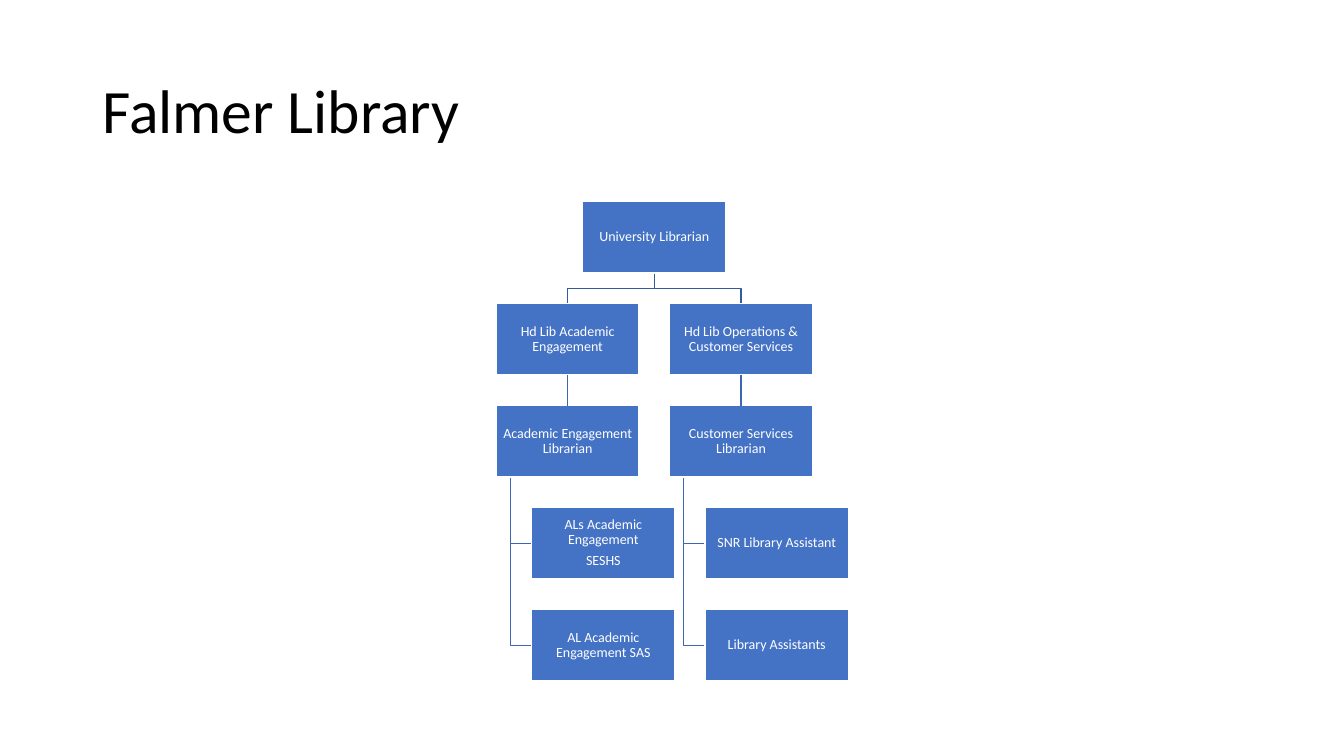
from pptx import Presentation
from pptx.dml.color import RGBColor
from pptx.enum.shapes import MSO_CONNECTOR, MSO_SHAPE
from pptx.enum.text import MSO_ANCHOR, PP_ALIGN
from pptx.oxml.ns import qn
from pptx.util import Cm, Pt
from lxml.etree import SubElement

# Chart geometry in centimetres
BOX_WIDTH, BOX_HEIGHT = 3.61, 1.8
TOP, ROW_STEP = 5.08, 2.57
LEFT, COLUMN_STEP = 12.5, 4.37
INDENT = 0.9
DROP = 0.36  # from a parent's left edge to the line down to its staff

BRANCHES = [
    ["Hd Lib Academic Engagement", "Academic Engagement Librarian",
     "ALs Academic Engagement\nSESHS", "AL Academic Engagement SAS"],
    ["Hd Lib Operations & Customer Services", "Customer Services Librarian",
     "SNR Library Assistant", "Library Assistants"],
]


def color(value):
    return RGBColor.from_string(value)


def row_top(row):
    return TOP + row * ROW_STEP


class ChartPage:
    font = "Calibri"
    fill = "4472C4"
    white = "FFFFFF"
    branch_line = "3E67B2"
    top_line = "365B9D"

    def __init__(self, deck):
        self.page = deck.slides.add_slide(deck.slide_layouts[5])

    def set_text(self, frame, text, size, text_color, align, space_after=0):
        frame.text = text
        frame.word_wrap = True
        frame.vertical_anchor = MSO_ANCHOR.MIDDLE
        for para in frame.paragraphs:
            para.alignment = align
            para.line_spacing = 0.9
            para.space_after = Pt(space_after)
            para.font.name = self.font
            para.font.size = Pt(size)
            para.font.color.rgb = color(text_color)

    def title(self, text):
        box = self.page.shapes.title
        box.left, box.top, box.width, box.height = Cm(2.33), Cm(1.01), Cm(29.21), Cm(3.68)
        self.set_text(box.text_frame, text, 44, "000000", PP_ALIGN.LEFT)

    def box(self, left, top, text):
        box = self.page.shapes.add_shape(
            MSO_SHAPE.RECTANGLE, Cm(left), Cm(top), Cm(BOX_WIDTH), Cm(BOX_HEIGHT))
        box.shadow.inherit = False
        box.fill.solid()
        box.fill.fore_color.rgb = color(self.fill)
        box.line.color.rgb = color(self.white)
        box.line.width = Pt(1)
        frame = box.text_frame
        frame.margin_left = frame.margin_right = Cm(0.02)
        frame.margin_top = frame.margin_bottom = Cm(0.02)
        self.set_text(frame, text, 10, self.white, PP_ALIGN.CENTER, 4.2)
        return box

    def bent_line(self, points, line_color):
        start, *rest = [(Cm(x), Cm(y)) for x, y in points]
        builder = self.page.shapes.build_freeform(*start)
        builder.add_line_segments(rest, close=False)
        line = builder.convert_to_shape()
        line.shadow.inherit = False
        line.fill.background()
        line.line.color.rgb = color(line_color)
        line.line.width = Pt(1)

    def join(self, upper, lower):
        line = self.page.shapes.add_connector(MSO_CONNECTOR.STRAIGHT, 0, 0, 0, 0)
        line.begin_connect(upper, 2)
        line.end_connect(lower, 0)
        line.line.color.rgb = color(self.branch_line)
        line.line.width = Pt(1)
        SubElement(line._element.spPr, qn("a:effectLst"))


def main():
    deck = Presentation()
    deck.slide_width, deck.slide_height = Cm(33.87), Cm(19.05)
    chart = ChartPage(deck)
    chart.title("Falmer Library")

    # Head of the library, centred over the branches
    head_left = LEFT + COLUMN_STEP / 2
    head_center = head_left + BOX_WIDTH / 2
    head_bottom = TOP + BOX_HEIGHT
    middle = (head_bottom + row_top(1)) / 2

    # Each branch: two managers in line, then indented staff
    for column, names in enumerate(BRANCHES):
        left = LEFT + column * COLUMN_STEP
        center = left + BOX_WIDTH / 2
        chart.bent_line([(head_center, head_bottom), (head_center, middle),
                         (center, middle), (center, row_top(1))], chart.top_line)
        for row in (3, 4):
            staff_middle = row_top(row) + BOX_HEIGHT / 2
            chart.bent_line([(left + DROP, row_top(2) + BOX_HEIGHT),
                             (left + DROP, staff_middle),
                             (left + INDENT, staff_middle)], chart.branch_line)
        boxes = [chart.box(left + (INDENT if row > 2 else 0), row_top(row), name)
                 for row, name in enumerate(names, start=1)]
        chart.join(boxes[0], boxes[1])

    chart.box(head_left, TOP, "University Librarian")
    deck.save("out.pptx")


if __name__ == "__main__":
    main()
